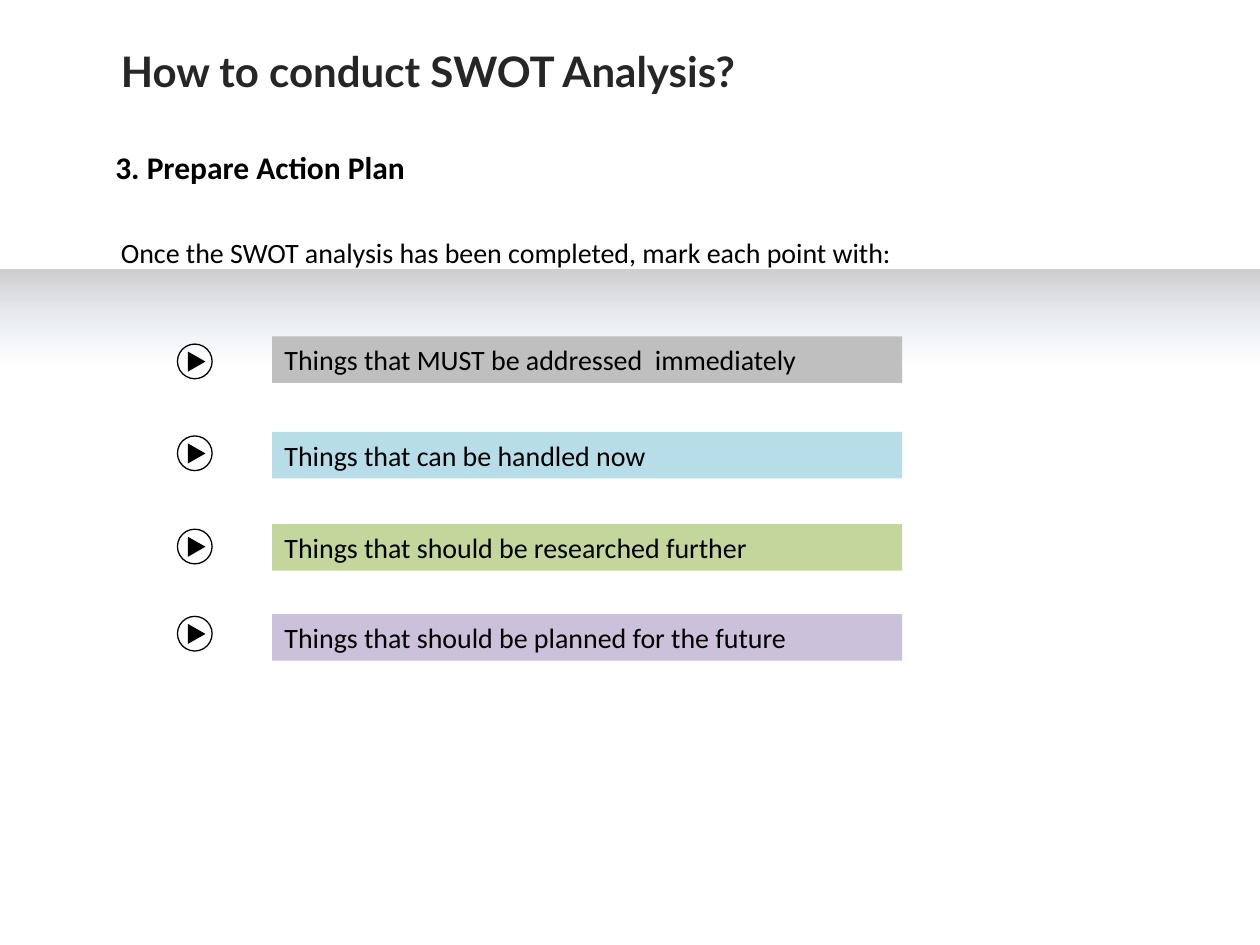
from lxml.etree import SubElement
from pptx import Presentation
from pptx.dml.color import RGBColor
from pptx.enum.shapes import MSO_SHAPE
from pptx.enum.text import MSO_ANCHOR, PP_ALIGN
from pptx.oxml.ns import qn
from pptx.util import Pt

BLACK = RGBColor(0x00, 0x00, 0x00)
CHARCOAL = RGBColor(0x26, 0x26, 0x26)
SHADE = RGBColor(0x0D, 0x0D, 0x0D)
BLUE = RGBColor(0x3F, 0x80, 0xCE)
GREY = RGBColor(0xBF, 0xBF, 0xBF)
AQUA = RGBColor(0xB7, 0xDE, 0xE8)
GREEN = RGBColor(0xC3, 0xD6, 0x9B)
LAVENDER = RGBColor(0xCC, 0xC1, 0xDA)

ACTIONS = [
    ("Things that MUST be addressed  immediately", GREY, 192.2, 196.6),
    ("Things that can be handled now", AQUA, 246.8, 249.1),
    ("Things that should be researched further", GREEN, 299.5, 302.4),
    ("Things that should be planned for the future", LAVENDER, 351, 352.2),
]


def write_text(shape, text, size, font="Calibri", color=BLACK, bold=False):
    frame = shape.text_frame
    frame.word_wrap = True
    frame.vertical_anchor = MSO_ANCHOR.TOP
    paragraph = frame.paragraphs[0]
    paragraph.text = text
    paragraph.alignment = PP_ALIGN.LEFT
    paragraph.font.name = font
    paragraph.font.size = Pt(size)
    paragraph.font.bold = bold
    paragraph.font.color.rgb = color


def add_text(slide, left, top, width, height, text, size, **style):
    box = slide.shapes.add_textbox(Pt(left), Pt(top), Pt(width), Pt(height))
    write_text(box, text, size, **style)


def add_plain_shape(shapes, kind, left, top, width, height, color=None):
    shape = shapes.add_shape(kind, Pt(left), Pt(top), Pt(width), Pt(height))
    shape.shadow.inherit = False
    shape.line.fill.background()
    if color is None:
        shape.fill.background()
    else:
        shape.fill.solid()
        shape.fill.fore_color.rgb = color
    return shape


def add_fading_band(slide):
    band = add_plain_shape(slide.shapes, MSO_SHAPE.RECTANGLE, 0, 153.8, 720, 95)
    band.fill.gradient()
    band.fill.gradient_angle = 90
    stops = [(0.43, BLUE, 0), (1, SHADE, 20)]
    for stop, (position, color, _) in zip(band.fill.gradient_stops, stops):
        stop.position = position
        stop.color.rgb = color
    color_elements = list(band._element.spPr.iter(qn("a:srgbClr")))
    for element, (_, _, opacity) in zip(color_elements, stops):
        SubElement(element, qn("a:alpha")).set("val", str(opacity * 1000))


def add_play_icon(slide, top):
    group = slide.shapes.add_group_shape()
    circle = add_plain_shape(group.shapes, MSO_SHAPE.OVAL, 101.4, top, 19.8, 19.8)
    circle.line.color.rgb = BLACK
    circle.line.width = Pt(0.75)
    triangle = add_plain_shape(
        group.shapes, MSO_SHAPE.ISOSCELES_TRIANGLE, 106.6, top + 5, 11.5, 10.1, BLACK
    )
    triangle.rotation = 90


def add_action(slide, text, color, bar_top, icon_top):
    add_play_icon(slide, icon_top)
    bar = add_plain_shape(
        slide.shapes, MSO_SHAPE.RECTANGLE, 155.5, bar_top, 360, 26.6, color
    )
    write_text(bar, text, 16)


def main():
    presentation = Presentation()
    presentation.slide_width = Pt(720)
    presentation.slide_height = Pt(540)
    slide = presentation.slides.add_slide(presentation.slide_layouts[6])

    add_text(slide, 62, 22.4, 419, 36.4, "How to conduct SWOT Analysis?", 24,
             font="Lato", color=CHARCOAL, bold=True)
    add_fading_band(slide)
    add_text(slide, 58.8, 81, 212, 29, "3. Prepare Action Plan", 18, bold=True)
    add_text(slide, 62, 131, 536, 26.7,
             "Once the SWOT analysis has been completed, mark each point with:", 16)
    for action in ACTIONS:
        add_action(slide, *action)

    presentation.save("out.pptx")


if __name__ == "__main__":
    main()
